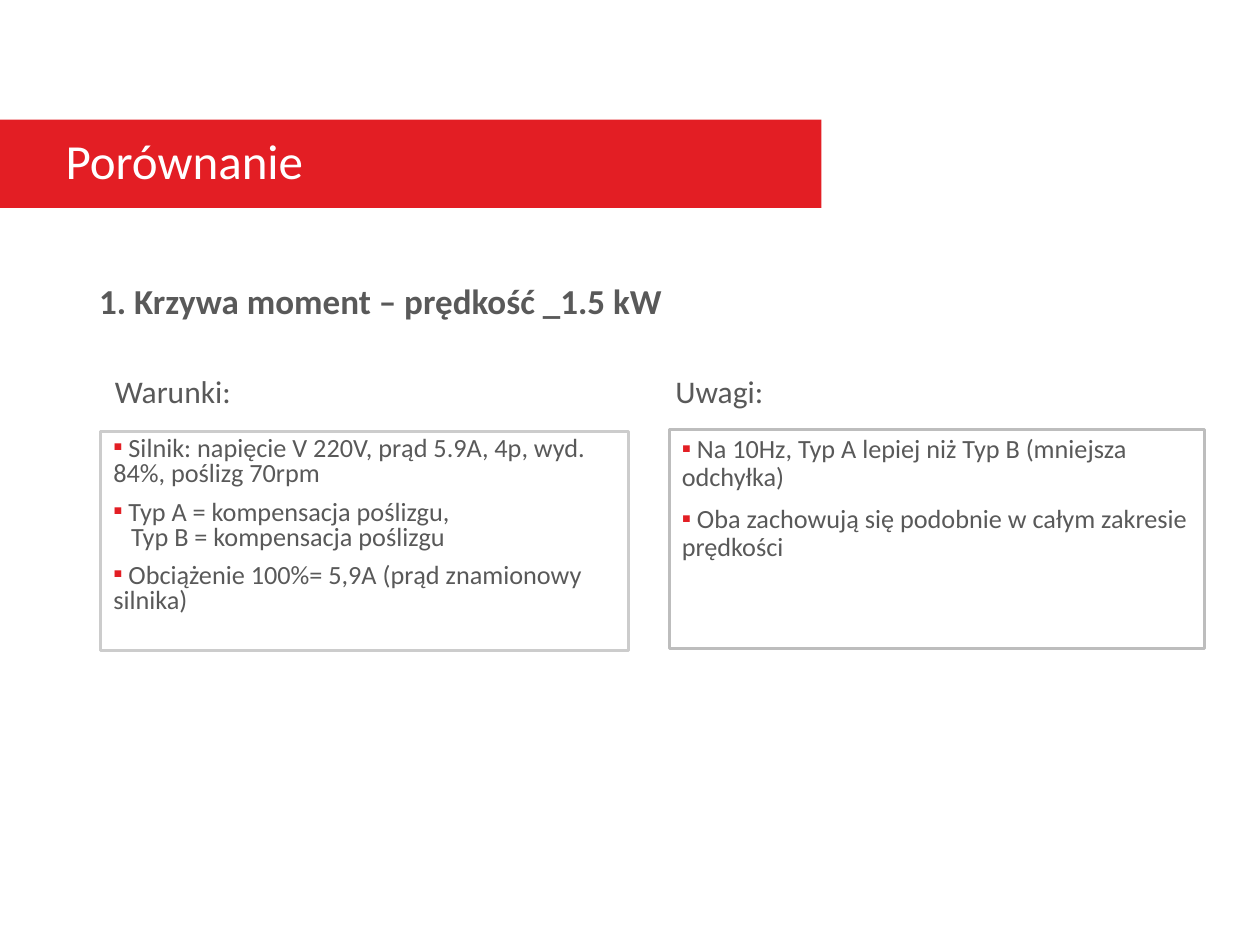
"""Build the comparison slide on the torque and speed curve."""
from lxml.etree import SubElement
from pptx import Presentation
from pptx.dml.color import RGBColor
from pptx.enum.shapes import MSO_SHAPE
from pptx.enum.text import MSO_ANCHOR, MSO_AUTO_SIZE, PP_ALIGN
from pptx.oxml.ns import qn
from pptx.util import Cm, Pt

RED = RGBColor(0xE3, 0x1E, 0x24)
WHITE = RGBColor(0xFF, 0xFF, 0xFF)
TEXT_GREY = RGBColor(0x59, 0x59, 0x59)
LEFT_BORDER = RGBColor(0xCC, 0xCC, 0xCC)
RIGHT_BORDER = RGBColor(0xBD, 0xBD, 0xBD)


def place(shape, left, top, width, height, anchor=MSO_ANCHOR.TOP):
    position = {"left": left, "top": top, "width": width, "height": height}
    for name, value in position.items():
        setattr(shape, name, Cm(value))
    frame_format = {"word_wrap": True, "auto_size": MSO_AUTO_SIZE.NONE, "vertical_anchor": anchor}
    for name, value in frame_format.items():
        setattr(shape.text_frame, name, value)


def write(paragraph, text, size, color=TEXT_GREY, bold=False, line_spacing=1.0, space_before=0):
    paragraph_format = {
        "alignment": PP_ALIGN.LEFT,
        "line_spacing": line_spacing,
        "space_before": Pt(space_before),
        "space_after": Pt(0),
    }
    for name, value in paragraph_format.items():
        setattr(paragraph, name, value)
    run = paragraph.add_run()
    run.text = text
    for name, value in {"name": "Calibri", "size": Pt(size), "bold": bold}.items():
        setattr(run.font, name, value)
    run.font.color.rgb = color


presentation = Presentation()
presentation.slide_width = Cm(25.4)
presentation.slide_height = Cm(19.05)
slide = presentation.slides.add_slide(presentation.slide_layouts.get_by_name("Comparison"))
placeholders = {shape.placeholder_format.idx: shape for shape in slide.placeholders}

banner = slide.shapes.add_shape(MSO_SHAPE.RECTANGLE, Cm(-0.05), Cm(2.41), Cm(16.61), Cm(1.78))
banner.shadow.inherit = False
banner.fill.solid()
banner.fill.fore_color.rgb = RED
banner.line.fill.background()
title = slide.shapes.title
title._element.addprevious(banner._element)
place(title, 1.07, 2.41, 21.89, 1.78, MSO_ANCHOR.MIDDLE)
write(title.text_frame.paragraphs[0], "Porównanie", 28, WHITE, line_spacing=0.9)

subtitle = slide.shapes.add_textbox(0, 0, 0, 0)
place(subtitle, 1.75, 5.08, 21.69, 1.78)
write(subtitle.text_frame.paragraphs[0], "1. Krzywa moment – prędkość _1.5 kW", 20, bold=True, line_spacing=1.5)

columns = [
    {
        "indexes": (1, 2),
        "heading": "Warunki:",
        "heading_left": 2.06,
        "box": (2.03, 8.69, 10.64, 4.42),
        "border": LEFT_BORDER,
        "line_spacing": 0.8,
        "items": [
            ("Silnik: napięcie V 220V, prąd 5.9A, 4p, wyd. 84%, poślizg 70rpm", True),
            ("Typ A = kompensacja poślizgu,", True),
            ("Typ B = kompensacja poślizgu", False),
            ("Obciążenie 100%= 5,9A (prąd znamionowy silnika)", True),
        ],
    },
    {
        "indexes": (3, 4),
        "heading": "Uwagi:",
        "heading_left": 13.36,
        "box": (13.49, 8.66, 10.8, 4.42),
        "border": RIGHT_BORDER,
        "line_spacing": 0.9,
        "items": [
            ("Na 10Hz, Typ A lepiej niż Typ B (mniejsza odchyłka)", True),
            ("Oba zachowują się podobnie w całym zakresie prędkości", True),
        ],
    },
]

for column in columns:
    heading, box = (placeholders[index] for index in column["indexes"])
    place(heading, column["heading_left"], 7.37, 10, 1.4)
    write(heading.text_frame.paragraphs[0], column["heading"], 18)

    place(box, *column["box"])
    box.line.color.rgb = column["border"]
    box.line.width = Pt(1.75)
    for number, (text, bulleted) in enumerate(column["items"]):
        frame = box.text_frame
        paragraph = frame.add_paragraph() if number else frame.paragraphs[0]
        properties = paragraph._p.get_or_add_pPr()
        properties.set("marL", str(0 if bulleted else Cm(0.36)))
        properties.set("indent", "0")
        if bulleted:
            bullet_color = SubElement(properties, qn("a:buClr"))
            SubElement(bullet_color, qn("a:srgbClr"), val=str(RED))
            SubElement(properties, qn("a:buFont"), typeface="Calibri")
            SubElement(properties, qn("a:buChar"), char="▪")
        else:
            SubElement(properties, qn("a:buNone"))
        write(
            paragraph,
            f" {text}" if bulleted else text,
            15,
            line_spacing=column["line_spacing"],
            space_before=7.5 if number and bulleted else 0,
        )

presentation.save("out.pptx")
